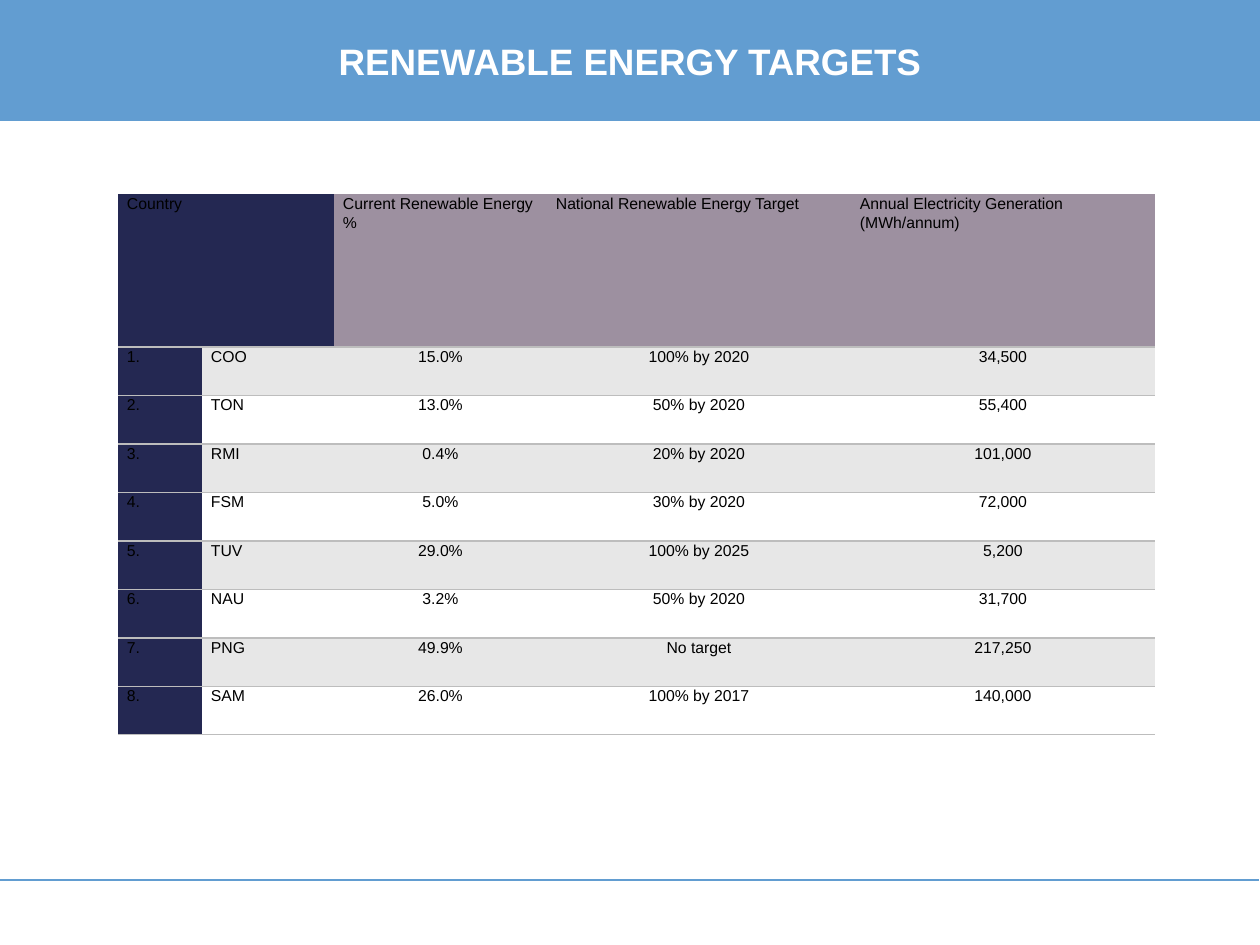
import pptx
import pptx.dml.color
import pptx.enum.shapes
import pptx.enum.text
import pptx.oxml
import pptx.oxml.ns
import pptx.util
from lxml import etree

RGBColor = pptx.dml.color.RGBColor
PP_ALIGN = pptx.enum.text.PP_ALIGN

BLUE = RGBColor(0x62, 0x9D, 0xD1)
NAVY = RGBColor(0x24, 0x28, 0x52)
MAUVE = RGBColor(0x9D, 0x90, 0xA0)
BAND = RGBColor(0xE7, 0xE7, 0xE7)
RULE = RGBColor(0xBD, 0xBD, 0xBD)
WHITE = RGBColor(0xFF, 0xFF, 0xFF)
BLACK = RGBColor(0x00, 0x00, 0x00)

FONT = "Arial"
PX_PER_INCH = 126
NO_STYLE = "{2D5ABB26-0587-4C30-8999-92F81FD0307C}"

COLUMN_WIDTHS = [84, 132, 213, 304, 304]
HEADER_HEIGHT = 153
BODY_HEIGHT = 388

HEADERS = ["Country", "", "Current Renewable Energy %", "National Renewable Energy Target",
           "Annual Electricity Generation\n(MWh/annum)"]
COUNTRIES = [
    ("COO", "15.0%", "100% by 2020", "34,500"),
    ("TON", "13.0%", "50% by 2020", "55,400"),
    ("RMI", "0.4%", "20% by 2020", "101,000"),
    ("FSM", "5.0%", "30% by 2020", "72,000"),
    ("TUV", "29.0%", "100% by 2025", "5,200"),
    ("NAU", "3.2%", "50% by 2020", "31,700"),
    ("PNG", "49.9%", "No target", "217,250"),
    ("SAM", "26.0%", "100% by 2017", "140,000"),
]


def px(n):
    return pptx.util.Emu(n * 914400 // PX_PER_INCH)


def format_text(tf, size, color, align, bold=False, spacing=None):
    for p in tf.paragraphs:
        p.alignment = align
        p.line_spacing = spacing
        for r in p.runs:
            r.font.name = FONT
            r.font.size = pptx.util.Pt(size)
            r.font.bold = bold
            r.font.color.rgb = color


def add_banner(slide):
    sp = slide.shapes.add_shape(pptx.enum.shapes.MSO_SHAPE.RECTANGLE, 0, 0, px(1260), px(121))
    sp.shadow.inherit = False
    sp.fill.solid()
    sp.fill.fore_color.rgb = BLUE
    sp.line.fill.background()


def add_title(slide, text):
    tf = slide.shapes.add_textbox(px(63), px(1), px(1134), px(120)).text_frame
    tf.word_wrap = True
    tf.margin_left = tf.margin_right = tf.margin_top = tf.margin_bottom = 0
    tf.vertical_anchor = pptx.enum.text.MSO_ANCHOR.MIDDLE
    tf.text = text
    format_text(tf, 21, WHITE, PP_ALIGN.CENTER, bold=True)


def add_footer_line(slide):
    line = slide.shapes.add_connector(
        pptx.enum.shapes.MSO_CONNECTOR.STRAIGHT, px(-1), px(880), px(1259), px(880))
    line.line.color.rgb = BLUE
    line.line.width = pptx.util.Pt(1)
    etree.SubElement(line._element.spPr, pptx.oxml.ns.qn("a:effectLst"))


def add_bottom_border(cell):
    """Must run before the fill is set, as borders come first in a:tcPr."""
    cell._tc.get_or_add_tcPr().append(pptx.oxml.parse_xml(
        f'<a:lnB {pptx.oxml.ns.nsdecls("a")} w="12700"><a:solidFill>'
        f'<a:srgbClr val="{RULE}"/></a:solidFill></a:lnB>'))


def fill_cell(cell, text, align, color):
    """Set text, border and fill; a color of None leaves the cell clear."""
    cell.margin_left = cell.margin_right = px(9)
    cell.margin_top = cell.margin_bottom = 0
    cell.text_frame.text = text
    format_text(cell.text_frame, 9, BLACK, align, spacing=1.07)
    add_bottom_border(cell)
    if color is None:
        cell.fill.background()
    else:
        cell.fill.solid()
        cell.fill.fore_color.rgb = color


def add_targets_table(slide):
    frame = slide.shapes.add_table(
        len(COUNTRIES) + 1, len(COLUMN_WIDTHS), px(118), px(194),
        px(sum(COLUMN_WIDTHS)), px(HEADER_HEIGHT + BODY_HEIGHT))
    table = frame.table
    table._tbl.tblPr.find(pptx.oxml.ns.qn("a:tableStyleId")).text = NO_STYLE
    for column, width in zip(table.columns, COLUMN_WIDTHS):
        column.width = px(width)

    table.rows[0].height = px(HEADER_HEIGHT)
    for c, text in enumerate(HEADERS):
        fill_cell(table.cell(0, c), text, PP_ALIGN.LEFT, NAVY if c < 2 else MAUVE)
    table.cell(0, 0).merge(table.cell(0, 1))

    for n, country in enumerate(COUNTRIES, start=1):
        table.rows[n].height = px(BODY_HEIGHT) // len(COUNTRIES)
        band = BAND if n % 2 else None
        for c, text in enumerate((f"{n}.", *country)):
            align = PP_ALIGN.JUSTIFY if c < 2 else PP_ALIGN.CENTER
            fill_cell(table.cell(n, c), text, align, NAVY if c == 0 else band)


def main():
    prs = pptx.Presentation()
    prs.slide_width = px(1260)
    prs.slide_height = px(945)
    slide = prs.slides.add_slide(prs.slide_layouts[6])
    add_banner(slide)
    add_footer_line(slide)
    add_title(slide, "RENEWABLE ENERGY TARGETS")
    add_targets_table(slide)
    prs.save("out.pptx")


if __name__ == "__main__":
    main()
